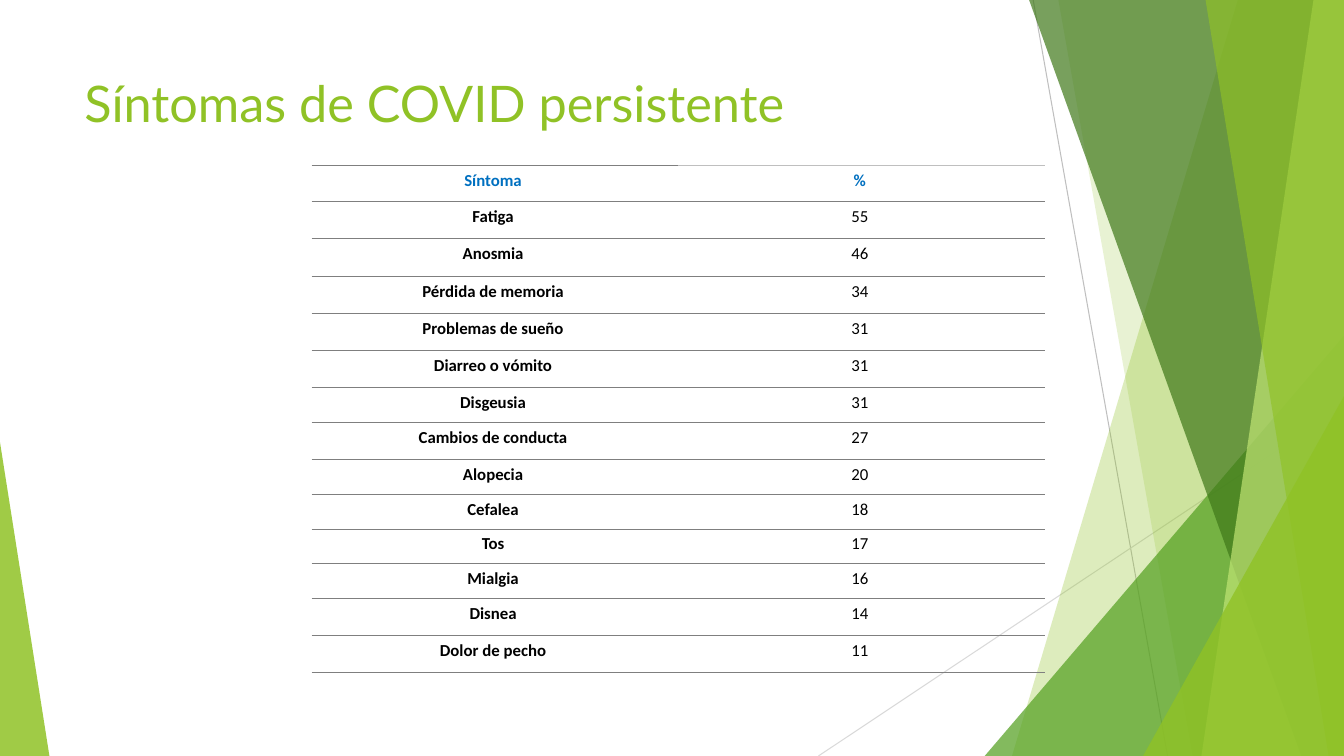
from lxml import etree
from pptx import Presentation
from pptx.dml.color import RGBColor
from pptx.enum.shapes import MSO_CONNECTOR, MSO_SHAPE
from pptx.enum.text import MSO_ANCHOR, PP_ALIGN
from pptx.oxml.ns import qn
from pptx.util import Pt

STRAIGHT = MSO_CONNECTOR.STRAIGHT
TRIANGLE = MSO_SHAPE.ISOSCELES_TRIANGLE
TOP = MSO_ANCHOR.TOP
CENTER = PP_ALIGN.CENTER

WIDTH, HEIGHT = 960, 540
COLORS = {
    "lime": "90C226",
    "green": "54A021",
    "forest": "3F7819",
    "pale": "C0E474",
    "blue": "0070C0",
    "black": "000000",
    "rule": "7F7F7F",
    "silver": "BFBFBF",
    "mist": "D9D9D9",
}
TITLE = "Síntomas de COVID persistente"
SYMPTOMS = [
    ("Síntoma", "%"),
    ("Fatiga", "55"),
    ("Anosmia", "46"),
    ("Pérdida de memoria", "34"),
    ("Problemas de sueño", "31"),
    ("Diarreo o vómito", "31"),
    ("Disgeusia", "31"),
    ("Cambios de conducta", "27"),
    ("Alopecia", "20"),
    ("Cefalea", "18"),
    ("Tos", "17"),
    ("Mialgia", "16"),
    ("Disnea", "14"),
    ("Dolor de pecho", "11"),
]
TALL, SHORT = 26.6, 24.75
SHORT_ROWS = {6, 8, 9, 10, 11}
COLUMN_WIDTH = 262

HAIRLINES = [
    ((738, 0), (834, HEIGHT), "silver"),
    ((WIDTH, 290), (584.6, HEIGHT), "mist"),
]
FACETS = [
    ("band", 884.2, 722.9, "lime", 30),
    ("band", 756, 851.8, "lime", 20),
    ("triangle", (703.4, 239.8, 256.6, 300.2), 1, "green", 72),
    ("band", 735.1, 929.5, "forest", 70),
    ("band", 938.2, 858.2, "pale", 70),
    ("band", 861.1, 949, "lime", 65),
    ("triangle", (816.5, 283, 143.5, 257), 1, "lime", 80),
    ("triangle", (0, 316, 35.3, 224), 0, "lime", 85),
]


def rgb(name):
    return RGBColor.from_string(COLORS[name])


def add_hairline(slide, start, end, color):
    line = slide.shapes.add_connector(STRAIGHT, *(Pt(v) for v in start + end))
    line.line.color.rgb = rgb(color)
    line.line.width = Pt(0.75)
    etree.SubElement(line._element.spPr, qn("a:effectLst"))


def paint(facet, color, opacity):
    facet.shadow.inherit = False
    facet.fill.solid()
    facet.fill.fore_color.rgb = rgb(color)
    facet.line.fill.background()
    solid = facet._element.spPr.find(qn("a:solidFill"))
    etree.SubElement(solid[0], qn("a:alpha"), val=str(opacity * 1000))


def add_band(slide, top_x, bottom_x):
    outline = slide.shapes.build_freeform(Pt(top_x), 0)
    corners = [(WIDTH, 0), (WIDTH, HEIGHT), (bottom_x, HEIGHT)]
    outline.add_line_segments([(Pt(x), Pt(y)) for x, y in corners])
    return outline.convert_to_shape()


def add_triangle(slide, box, apex):
    triangle = slide.shapes.add_shape(TRIANGLE, *(Pt(v) for v in box))
    triangle.adjustments[0] = apex
    return triangle


def set_borders(cell, top):
    properties = cell._tc.get_or_add_tcPr()
    sides = [("lnL", None), ("lnR", None), ("lnT", top), ("lnB", "rule")]
    for position, (side, color) in enumerate(sides):
        border = etree.Element(qn("a:" + side), w=str(Pt(0.75)))
        if color:
            solid = etree.SubElement(border, qn("a:solidFill"))
            etree.SubElement(solid, qn("a:srgbClr"), val=COLORS[color])
        else:
            etree.SubElement(border, qn("a:noFill"))
        properties.insert(position, border)


def add_title(slide):
    frame = slide.shapes.add_textbox(Pt(53.3), Pt(48.2), Pt(676.8), Pt(103.7)).text_frame
    frame.word_wrap = True
    frame.vertical_anchor = TOP
    title = frame.paragraphs[0]
    title.text = TITLE
    title.font.name = "Lato"
    title.font.size = Pt(36)
    title.font.color.rgb = rgb("lime")


def add_symptoms(slide):
    heights = [SHORT if r in SHORT_ROWS else TALL for r in range(len(SYMPTOMS))]
    heights[0] = 25.9
    table = slide.shapes.add_table(
        len(SYMPTOMS), 2, Pt(222.6), Pt(118.2), Pt(2 * COLUMN_WIDTH), Pt(sum(heights))
    ).table
    table.first_row = False
    table.horz_banding = False
    for column in table.columns:
        column.width = Pt(COLUMN_WIDTH)
    for r, symptom in enumerate(SYMPTOMS):
        table.rows[r].height = Pt(heights[r])
        for c, text in enumerate(symptom):
            cell = table.cell(r, c)
            cell.fill.background()
            cell.margin_right = Pt(10)
            cell.vertical_anchor = TOP
            set_borders(cell, "silver" if (r, c) == (0, 1) else "rule")
            entry = cell.text_frame.paragraphs[0]
            entry.text = text
            entry.alignment = CENTER
            entry.font.name = "Calibri"
            entry.font.size = Pt(12)
            entry.font.bold = r == 0 or c == 0
            entry.font.color.rgb = rgb("blue" if r == 0 else "black")


def main():
    deck = Presentation()
    deck.slide_width, deck.slide_height = Pt(WIDTH), Pt(HEIGHT)
    slide = deck.slides.add_slide(deck.slide_layouts[6])
    for start, end, color in HAIRLINES:
        add_hairline(slide, start, end, color)
    builders = {"band": add_band, "triangle": add_triangle}
    for kind, first, second, color, opacity in FACETS:
        paint(builders[kind](slide, first, second), color, opacity)
    add_title(slide)
    add_symptoms(slide)
    deck.save("out.pptx")


if __name__ == "__main__":
    main()
